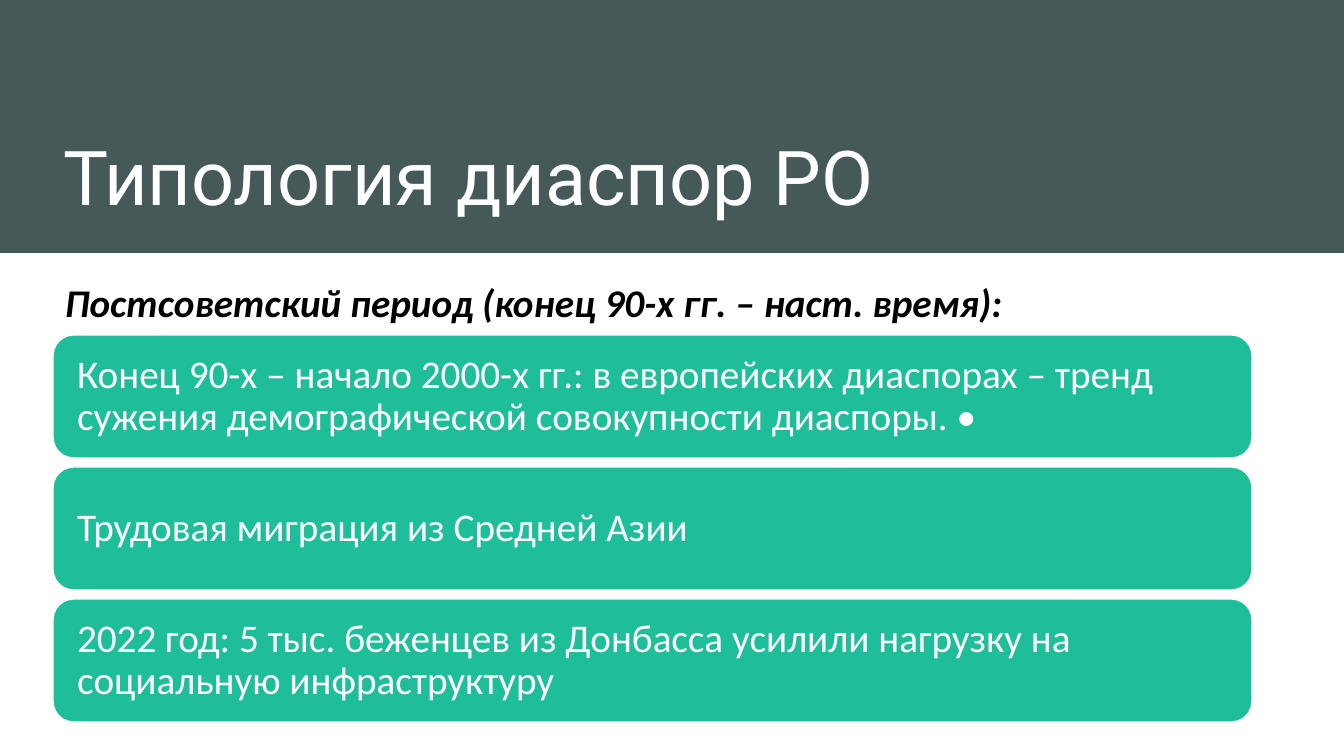
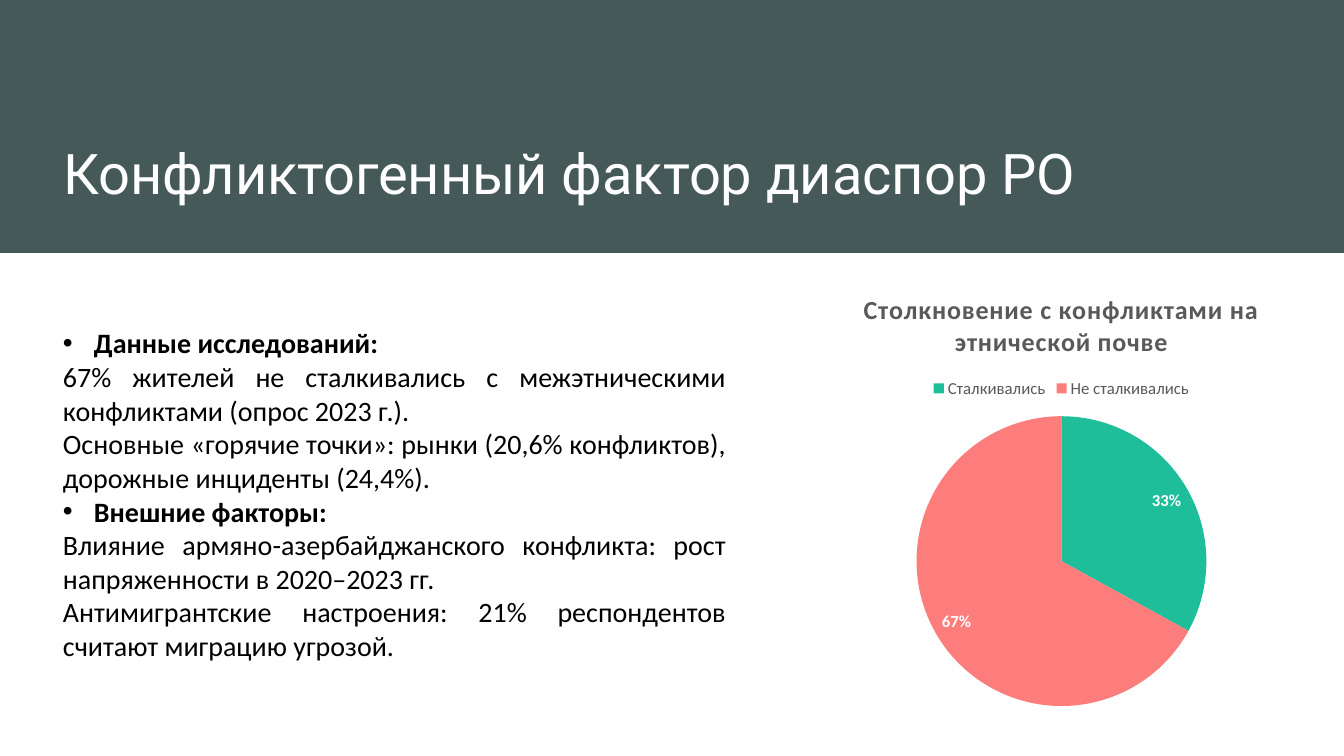
from lxml.etree import SubElement
from pptx import Presentation
from pptx.chart.data import CategoryChartData
from pptx.dml.color import RGBColor
from pptx.enum.chart import XL_CHART_TYPE, XL_LABEL_POSITION, XL_LEGEND_POSITION
from pptx.enum.shapes import MSO_SHAPE
from pptx.enum.text import MSO_ANCHOR, MSO_AUTO_SIZE, PP_ALIGN
from pptx.oxml.ns import qn
from pptx.util import Pt

SLATE = RGBColor(0x46, 0x59, 0x59)
GREEN = RGBColor(0x1E, 0xBE, 0x9B)
CORAL = RGBColor(0xFD, 0x7C, 0x7C)
GRAY = RGBColor(0x59, 0x59, 0x59)
BLACK = RGBColor(0, 0, 0)
WHITE = RGBColor(255, 255, 255)
BODY_FONT = "Calibri"
TITLE_FONT = "Roboto"
EMU_PER_INCH, PX_PER_INCH = 914400, 100.8
MARGIN, CONTENT_WIDTH = 53, 1199


def px(*lengths):
    """Turn px lengths into a list of EMU lengths."""
    return [round(length * EMU_PER_INCH / PX_PER_INCH) for length in lengths]


def write(paragraph, text, size, color=BLACK, font=BODY_FONT, bold=False,
          italic=False, align=PP_ALIGN.LEFT):
    paragraph.alignment = align
    run = paragraph.add_run()
    run.text = text
    run.font.name = font
    run.font.size = Pt(size)
    run.font.bold = bold
    run.font.italic = italic
    run.font.color.rgb = color
    return run


prs = Presentation()
prs.slide_width, prs.slide_height = px(1344, 756)
layout = prs.slide_layouts[5]

# Titled slides
slides = []
for heading, size, top in [
    ("Типология диаспор РО", 54, 40),
    ("Конфликтогенный фактор диаспор РО", 40, 25),
]:
    slide = prs.slides.add_slide(layout)
    title = slide.shapes.title
    title.left, title.top, title.width, title.height = px(MARGIN, top, CONTENT_WIDTH, 186)
    title.text_frame.auto_size = MSO_AUTO_SIZE.NONE
    title.text_frame.vertical_anchor = MSO_ANCHOR.BOTTOM
    write(title.text_frame.paragraphs[0], heading, size, WHITE, TITLE_FONT)
    slides.append(slide)
typology, conflicts = slides

# Shared band: drawn once, then moved to the back of the layout
band = typology.shapes.add_shape(MSO_SHAPE.RECTANGLE, *px(0, 0, 1344, 253))
band.shadow.inherit = False
band.fill.solid()
band.fill.fore_color.rgb = SLATE
band.line.fill.background()
layout.shapes.element.insert(2, band.element)

# Slide 1: period and its three stages
period = typology.shapes.add_textbox(*px(55, 273, 1078, 57)).text_frame
period.word_wrap = True
write(period.paragraphs[0], "Постсоветский период (конец 90-х гг. – наст. время):", 28,
      bold=True, italic=True)

CARD_TOP, CARD_HEIGHT, CARD_GAP = 335, 123, 9
stages = [
    "Конец 90-х – начало 2000-х гг.: в европейских диаспорах – тренд сужения "
    "демографической совокупности диаспоры. •",
    "Трудовая миграция из Средней Азии",
    "2022 год: 5 тыс. беженцев из Донбасса усилили нагрузку на социальную инфраструктуру",
]
for row, stage in enumerate(stages):
    card_top = CARD_TOP + row * (CARD_HEIGHT + CARD_GAP)
    card = typology.shapes.add_shape(
        MSO_SHAPE.ROUNDED_RECTANGLE, *px(MARGIN, card_top, CONTENT_WIDTH, CARD_HEIGHT))
    card.shadow.inherit = False
    card.fill.solid()
    card.fill.fore_color.rgb = GREEN
    card.line.color.rgb = WHITE
    card.line.width = Pt(1)
    frame = card.text_frame
    frame.word_wrap = True
    frame.vertical_anchor = MSO_ANCHOR.MIDDLE
    frame.margin_left, frame.margin_right = px(18, 18)
    frame.paragraphs[0].line_spacing = 0.9
    write(frame.paragraphs[0], stage, 28, WHITE)

# Slide 2: findings
findings = conflicts.shapes.add_textbox(*px(MARGIN, 321, 683, 350)).text_frame
findings.word_wrap = True
topics = {
    "Данные исследований:": [
        "67% жителей не сталкивались с межэтническими конфликтами (опрос 2023 г.).",
        "Основные «горячие точки»: рынки (20,6% конфликтов), дорожные инциденты (24,4%).",
    ],
    "Внешние факторы:": [
        "Влияние армяно-азербайджанского конфликта: рост напряженности в 2020–2023 гг.",
        "Антимигрантские настроения: 21% респондентов считают миграцию угрозой.",
    ],
}
lines = [(text, text == topic) for topic, facts in topics.items() for text in [topic, *facts]]
[indent] = px(31)
for index, (text, is_topic) in enumerate(lines):
    paragraph = findings.add_paragraph() if index else findings.paragraphs[0]
    write(paragraph, text, 20, bold=is_topic, align=PP_ALIGN.JUSTIFY)
    if is_topic:
        properties = paragraph._p.get_or_add_pPr()
        properties.set("marL", str(indent))
        properties.set("indent", str(-indent))
        SubElement(properties, qn("a:buFont"), typeface="Arial")
        SubElement(properties, qn("a:buChar"), char="•")

# Slide 2: survey chart
survey_name = "Столкновение с конфликтами на этнической почве"
survey = CategoryChartData()
survey.categories = ["Сталкивались", "Не сталкивались"]
survey.add_series(survey_name, [33, 67])
chart = conflicts.shapes.add_chart(
    XL_CHART_TYPE.PIE, *px(770, 272, 583, 448), survey).chart
chart.font.name = BODY_FONT
chart.font.size = Pt(10)
chart.has_title = True
chart_title = write(chart.chart_title.text_frame.paragraphs[0], survey_name, 18.6, GRAY,
                    bold=True, align=PP_ALIGN.CENTER)
chart_title.font._element.set("spc", "50")
chart.has_legend = True
chart.legend.position = XL_LEGEND_POSITION.TOP
chart.legend.include_in_layout = False
chart.legend.font.name = BODY_FONT
chart.legend.font.size = Pt(12)
chart.legend.font.color.rgb = GRAY

pie = chart.plots[0]
pie.vary_by_categories = True
for index, color in enumerate([GREEN, CORAL]):
    wedge = pie.series[0].points[index].format
    wedge.fill.solid()
    wedge.fill.fore_color.rgb = color
    wedge.line.fill.background()
pie.has_data_labels = True
labels = pie.data_labels
labels.show_percentage = True
labels.show_value = False
labels.number_format = "0%"
labels.number_format_is_linked = False
labels.position = XL_LABEL_POSITION.INSIDE_END
labels.font.name = BODY_FONT
labels.font.size = Pt(12)
labels.font.bold = True
labels.font.color.rgb = WHITE

prs.save("out.pptx")
